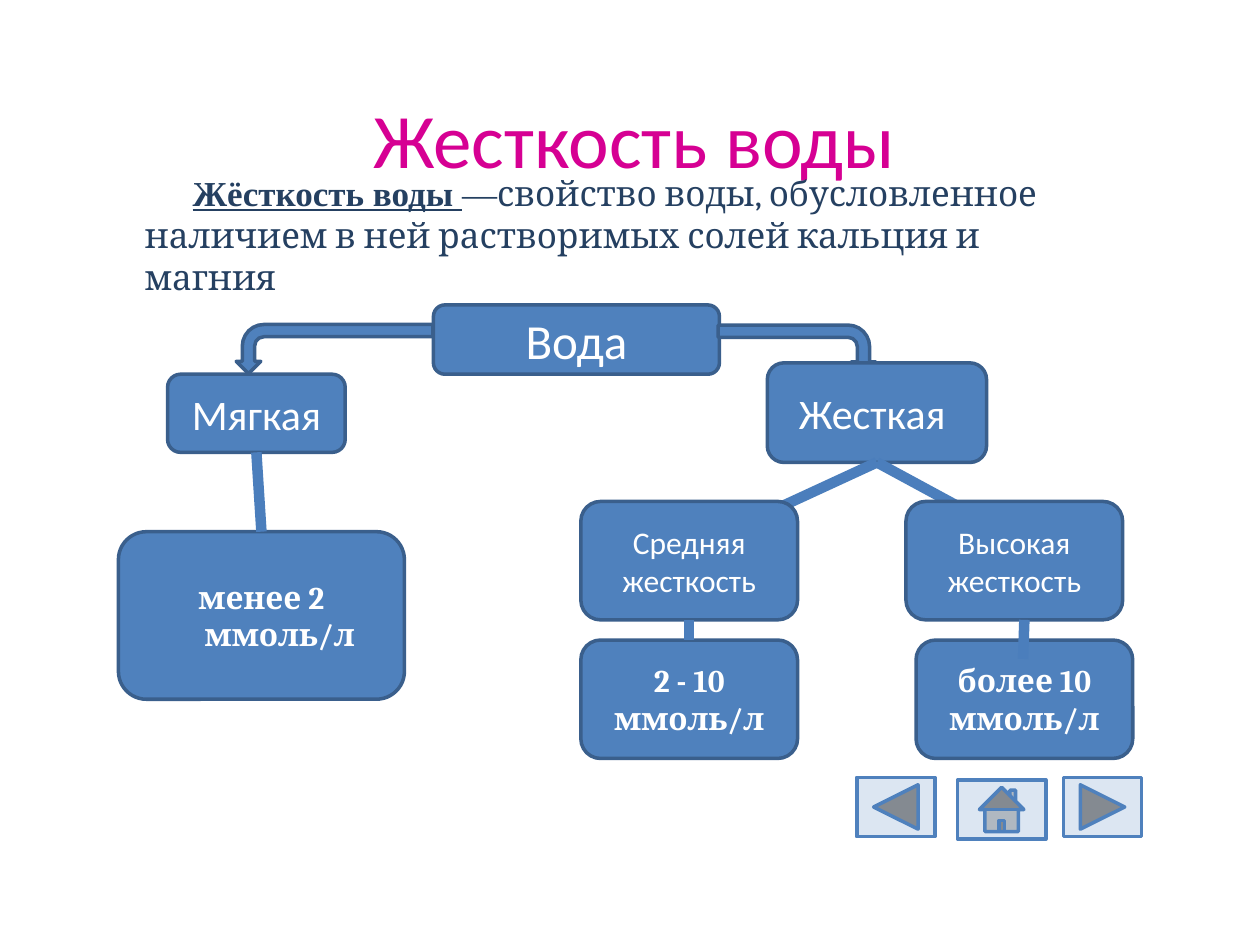
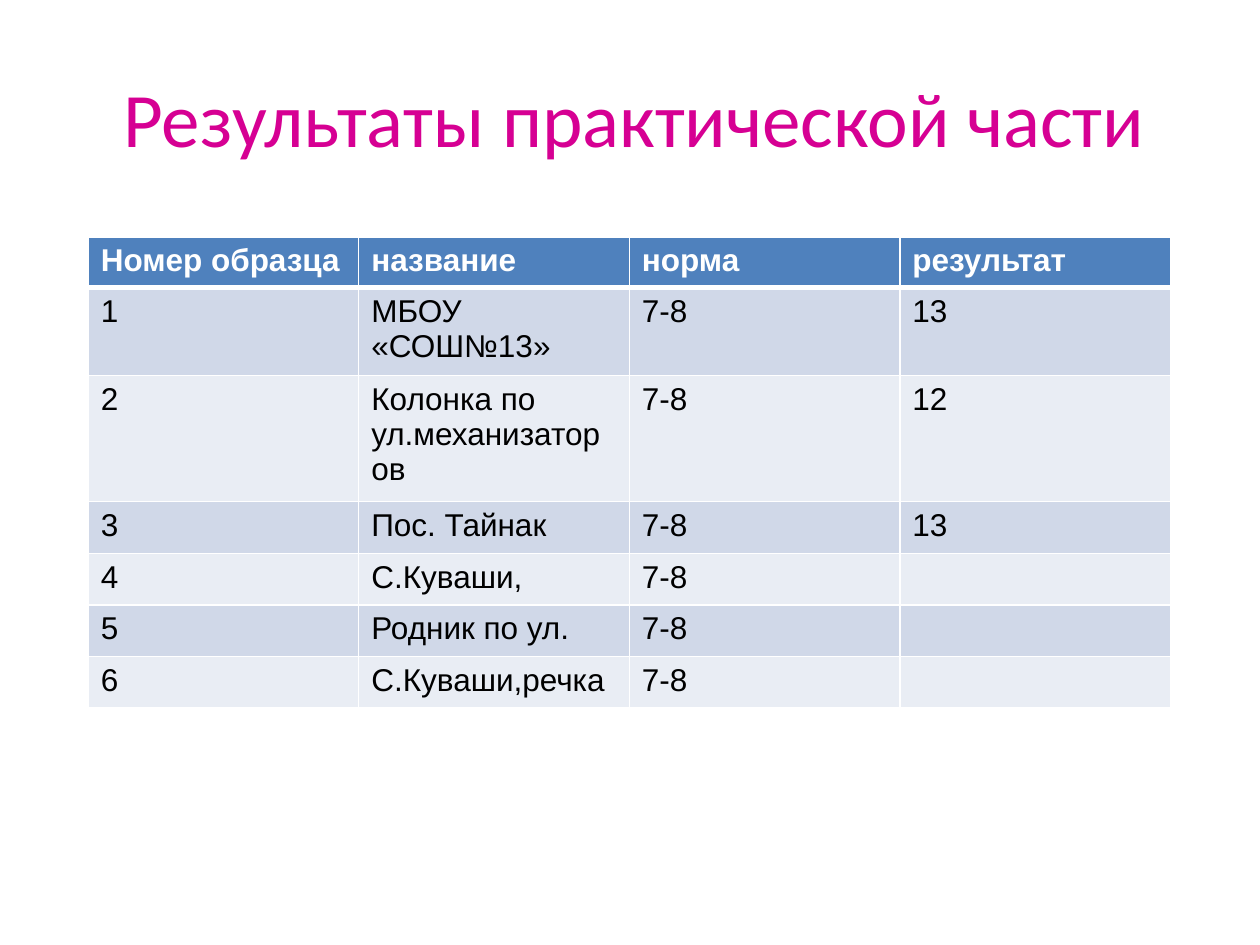
from lxml import etree
from pptx import Presentation
from pptx.dml.color import RGBColor
from pptx.enum.shapes import MSO_CONNECTOR, MSO_SHAPE
from pptx.enum.text import MSO_ANCHOR, PP_ALIGN
from pptx.oxml.ns import qn
from pptx.util import Inches, Pt

PINK = RGBColor(0xD6, 0x00, 0x93)
NAVY = RGBColor(0x25, 0x40, 0x61)
BLUE = RGBColor(0x4F, 0x81, 0xBD)
EDGE = RGBColor(0x3A, 0x5F, 0x8C)
LINK = RGBColor(0x4B, 0x7E, 0xBC)
PALE = RGBColor(0xDC, 0xE6, 0xF2)
WHITE = RGBColor(0xFF, 0xFF, 0xFF)
BLACK = RGBColor(0x00, 0x00, 0x00)
BANDS = (RGBColor(0xD0, 0xD8, 0xE8), RGBColor(0xE9, 0xED, 0xF4))

STRAIGHT = MSO_CONNECTOR.STRAIGHT
ROUND = MSO_SHAPE.ROUNDED_RECTANGLE
BENT = MSO_SHAPE.BENT_ARROW
BACK = MSO_SHAPE.ACTION_BUTTON_BACK_OR_PREVIOUS
HOME = MSO_SHAPE.ACTION_BUTTON_HOME
NEXT = MSO_SHAPE.ACTION_BUTTON_FORWARD_OR_NEXT
MIDDLE, TOP = MSO_ANCHOR.MIDDLE, MSO_ANCHOR.TOP
CENTER, LEFT = PP_ALIGN.CENTER, PP_ALIGN.LEFT

HEAD = {"name": "Calibri", "size": Pt(44)}
TERM = {"name": "Times New Roman", "size": Pt(20)}
BODY = {"name": "Cambria", "size": Pt(20)}
KIND = {"name": "Calibri", "size": Pt(24)}
LEVEL = {"name": "Calibri", "size": Pt(18)}
VALUE = {"name": "Cambria", "size": Pt(18), "bold": True}
CELL = {"name": "Arial", "size": Pt(18)}


class Deck:
    """Holds the presentation, its style and the current slide."""

    def __init__(self):
        self.file = Presentation()
        self.file.slide_width, self.file.slide_height = Inches(10), Inches(7.5)

    def page(self, title, top):
        self.slide = self.file.slides.add_slide(self.file.slide_layouts[6])
        self.text((0.7, top, 8.67, 1.25), [(title, HEAD)], PINK, MIDDLE, CENTER)

    def style(self, para, runs, color):
        for words, look in runs:
            run = para.add_run()
            run.text = words
            for key, value in look.items():
                setattr(run.font, key, value)
            run.font.color.rgb = color

    def indent(self, para, left, first):
        props = para._p.get_or_add_pPr()
        props.set("marL", str(Inches(left)))
        props.set("indent", str(Inches(first)))

    def text(self, place, runs, color, anchor=TOP, align=LEFT):
        frame = self.slide.shapes.add_textbox(*map(Inches, place)).text_frame
        return self.lay(frame, runs, color, anchor, align)

    def lay(self, frame, runs, color, anchor, align):
        frame.word_wrap = True
        frame.vertical_anchor = anchor
        para = frame.paragraphs[0]
        para.alignment = align
        self.style(para, runs, color)
        return para

    def shape(self, kind, place, fill=BLUE, edge=EDGE):
        shape = self.slide.shapes.add_shape(kind, *map(Inches, place))
        shape.shadow.inherit = False
        shape.fill.solid()
        shape.fill.fore_color.rgb = fill
        shape.line.color.rgb = edge
        shape.line.width = Pt(2)
        return shape

    def box(self, place, words, look):
        box = self.shape(ROUND, place)
        self.lay(box.text_frame, [(words, look)], WHITE, MIDDLE, CENTER)
        return box

    def arrow(self, place, flip=False):
        arrow = self.shape(BENT, place)
        arrow.rotation = 90
        if flip:
            arrow.element.spPr.find(qn("a:xfrm")).set("flipV", "1")

    def link(self, start, end, above=None, below=None):
        line = self.slide.shapes.add_connector(STRAIGHT, *map(Inches, start + end))
        line.line.color.rgb = LINK
        line.line.width = Pt(6)
        etree.SubElement(line.element.spPr, qn("a:effectLst"))
        if above:
            line.begin_connect(above, 2)
        if below:
            line.end_connect(below, 0)

    def border(self, cell, base):
        props = cell._tc.get_or_add_tcPr()
        for side, width in zip("LRTB", (1, 1, 1, base)):
            line = etree.SubElement(props, qn("a:ln" + side), w=str(Pt(width)))
            fill = etree.SubElement(line, qn("a:solidFill"))
            etree.SubElement(fill, qn("a:srgbClr"), val=str(WHITE))

    def table(self, place, rows, heights):
        size = len(rows), len(rows[0])
        table = self.slide.shapes.add_table(*size, *map(Inches, place)).table
        table.first_row = table.horz_banding = False
        for r, (row, height) in enumerate(zip(rows, heights)):
            table.rows[r].height = Inches(height)
            head = r == 0
            for c, words in enumerate(row):
                cell = table.cell(r, c)
                self.border(cell, 3 if head else 1)
                cell.fill.solid()
                cell.fill.fore_color.rgb = BLUE if head else BANDS[(r - 1) % 2]
                if words:
                    self.style(cell.text_frame.paragraphs[0],
                               [(words, {**CELL, "bold": head})],
                               WHITE if head else BLACK)


def water(deck):
    deck.page("Жесткость воды", 0.47)
    para = deck.text((0.67, 1.31, 8.28, 1.2), [
        ("Жёсткость воды", {**TERM, "bold": True, "underline": True}),
        (" ", {**TERM, "underline": True}),
        ("—", TERM),
        ("свойство воды, обусловленное наличием в ней растворимых солей "
         "кальция и магния", BODY)], NAVY)
    deck.indent(para, 0.38, 0.38)

    deck.box((3.44, 2.42, 2.27, 0.55), "Вода", {**KIND, "size": Pt(28)})
    deck.arrow((6.13, 2.15, 0.39, 1.25))
    deck.arrow((2.46, 1.99, 0.39, 1.56), flip=True)
    soft = deck.box((1.33, 2.97, 1.41, 0.62), "Мягкая", KIND)
    hard = deck.box((6.09, 2.88, 1.74, 0.79), "Жесткая ", KIND)
    for left in (5.4, 8.29):
        deck.link((6.96, 3.67), (left, 4.39), hard)

    low = deck.box((0.94, 4.22, 2.27, 1.33), "менее 2 ммоль/л", VALUE)
    deck.indent(low.text_frame.paragraphs[0], 0.29, -0.29)
    deck.link((2.03, 3.59), (2.07, 4.22), soft, low)

    size = 1.72, 0.94
    mid = deck.box((4.61, 3.98, *size), "Средняя жесткость", LEVEL)
    deck.box((7.19, 3.98, *size), "Высокая жесткость", LEVEL)
    some = deck.box((4.61, 5.08, *size), "2 - 10 ммоль/л", VALUE)
    deck.box((7.27, 5.08, *size), "более 10 ммоль/л", VALUE)
    deck.link((5.47, 4.92), (5.47, 5.08), mid, some)
    deck.link((8.13, 4.92), (8.12, 5.23))

    for kind, left, top, width in ((BACK, 6.8, 6.17, 0.62),
                                   (HOME, 7.6, 6.19, 0.7),
                                   (NEXT, 8.44, 6.17, 0.62)):
        deck.shape(kind, (left, top, width, 0.47), PALE, BLUE)


def results(deck):
    deck.page("Результаты практической части", 0.3)
    tests = (("МБОУ «СОШ№13»", "13"), ("Колонка по ул.механизаторов", "12"),
             ("Пос. Тайнак", "13"), ("С.Куваши,", ""), ("Родник по ул.", ""),
             ("С.Куваши,речка", ""))
    rows = [("Номер образца", "название", "норма", "результат")]
    rows += [(str(n), name, "7-8", found)
             for n, (name, found) in enumerate(tests, 1)]
    deck.table((0.7, 1.88, 8.59, 3.42), rows, [0.4] + [0.7] * 2 + [0.41] * 4)


def main():
    deck = Deck()
    water(deck)
    results(deck)
    deck.file.save("out.pptx")


if __name__ == "__main__":
    main()
